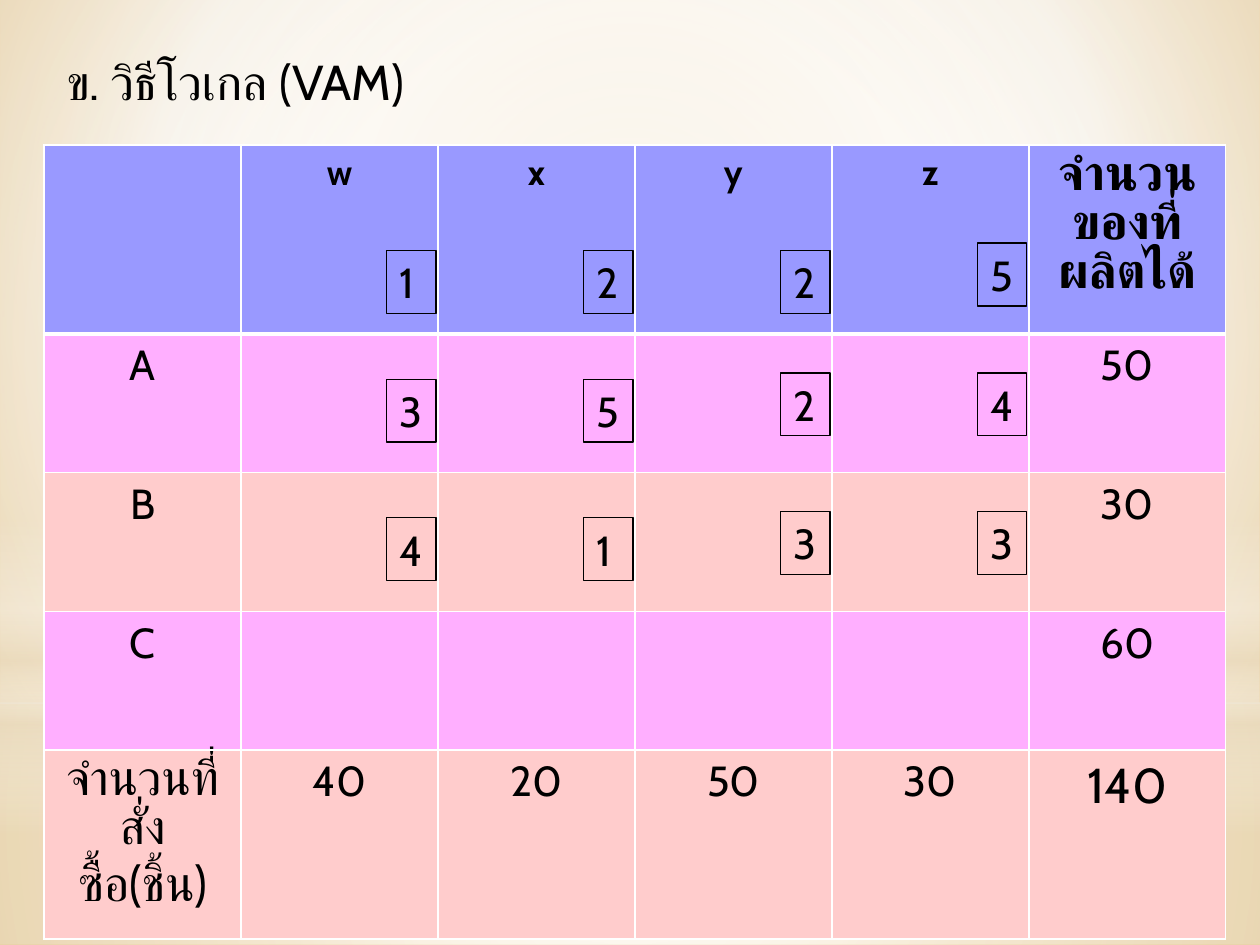
from lxml.etree import SubElement
from pptx import Presentation
from pptx.dml.color import RGBColor
from pptx.enum.shapes import MSO_SHAPE as Shape
from pptx.enum.text import MSO_ANCHOR as Anchor, MSO_AUTO_SIZE as AutoSize, PP_ALIGN as Align
from pptx.oxml import parse_xml
from pptx.oxml.ns import nsdecls, qn
from pptx.util import Inches, Pt

BLACK, WHITE, TAN = "000000", "FFFFFF", "EBDDC3"
HEADER, PINK, PEACH = "9999FF", "FFAFFF", "FFCCCC"
CENTER = (50, 50, 50, 50)

ROWS = [
    ["", "w", "x", "y", "z", "จำนวนของที่ผลิตได้"],
    ["A", "", "", "", "", "50"],
    ["B", "", "", "", "", "30"],
    ["C", "", "", "", "", "60"],
    ["จำนวนที่สั่งซื้อ(ชิ้น)", "40", "20", "50", "30", "140"],
]
ROW_HEIGHTS = [1.5, 1.1, 1.1, 1.1, 1.5]
ROW_FILLS = [HEADER, PINK, PEACH, PINK, PEACH]
TABLE_LEFT, TABLE_TOP, TABLE_WIDTH = 0.35, 1.15, 9.38
COLUMN_WIDTH = TABLE_WIDTH / len(ROWS[0])

# Unit costs of each destination column, and the tops of their boxes
COSTS = [("1", "3", "4"), ("2", "5", "1"), ("2", "2", "3"), ("5", "4", "3")]
COST_TOPS = [(1.99, 3.01, 4.11), (1.99, 3.01, 4.11), (1.99, 2.96, 4.06), (1.93, 2.96, 4.06)]
COST_LEFT = 3.07


def color(value):
    return RGBColor.from_string(value)


def make_gradient(solid_fill, stops, focus=None):
    """Replace a solid fill by (position, colour, opacity) stops: radial with a focus, else downward."""
    gradient = parse_xml(f'<a:gradFill {nsdecls("a")} rotWithShape="1"><a:gsLst/></a:gradFill>')
    for position, value, opacity in stops:
        stop = SubElement(gradient[0], qn("a:gs"), pos=str(position * 1000))
        stop_color = SubElement(stop, qn("a:srgbClr"), val=value)
        if opacity < 100:
            SubElement(stop_color, qn("a:alpha"), val=str(opacity * 1000))
    if focus:
        radial = SubElement(gradient, qn("a:path"), path="circle")
        SubElement(radial, qn("a:fillToRect"),
                   {side: str(part * 1000) for side, part in zip("ltrb", focus)})
    else:
        SubElement(gradient, qn("a:lin"), ang="5400000", scaled="0")
    solid_fill.getparent().replace(solid_fill, gradient)


class SlideBuilder:
    font = "Cabin"

    def __init__(self, slide):
        self.slide = slide

    def background(self, stops, focus):
        self.slide.background.fill.solid()
        make_gradient(self.slide.element.xpath(".//p:bgPr/a:solidFill")[0], stops, focus)

    def glow(self, kind, top, height, stops, focus=None):
        shape = self.slide.shapes.add_shape(kind, 0, Inches(top), Inches(10), Inches(height))
        shape.shadow.inherit = False
        shape.line.fill.background()
        shape.fill.solid()
        make_gradient(shape.element.spPr.find(qn("a:solidFill")), stops, focus)

    def add_text(self, frame, text, size, bold=False, align=Align.LEFT):
        paragraph = frame.paragraphs[0]
        paragraph.alignment = align
        run = paragraph.add_run()
        run.text = text
        run.font.name, run.font.size, run.font.bold = self.font, Pt(size), bold
        run.font.color.rgb = color(BLACK)

    def title(self, text, left, top, width, height):
        box = self.slide.shapes.add_textbox(Inches(left), Inches(top), Inches(width), Inches(height))
        box.text_frame.word_wrap = False
        box.text_frame.auto_size = AutoSize.SHAPE_TO_FIT_TEXT
        self.add_text(box.text_frame, text, 28)

    def cost_box(self, text, left, top):
        shape = self.slide.shapes.add_shape(
            Shape.RECTANGLE, Inches(left), Inches(top), Inches(0.39), Inches(0.5))
        shape.shadow.inherit = False
        shape.fill.background()
        shape.line.color.rgb = color(BLACK)
        shape.line.width = Pt(0.75)
        frame = shape.text_frame
        frame.word_wrap = True
        frame.auto_size = AutoSize.SHAPE_TO_FIT_TEXT
        frame.vertical_anchor = Anchor.TOP
        self.add_text(frame, text, 24)

    def borders(self, cell, top, bottom):
        properties = cell._tc.get_or_add_tcPr()
        for index, (side, width) in enumerate(zip("LRTB", (1, 1, top, bottom))):
            properties.insert(index, parse_xml(
                f'<a:ln{side} {nsdecls("a")} w="{Pt(width)}"><a:solidFill>'
                f'<a:srgbClr val="{WHITE}"/></a:solidFill></a:ln{side}>'))

    def table(self, rows, heights, fills):
        table = self.slide.shapes.add_table(
            len(rows), len(rows[0]), Inches(TABLE_LEFT), Inches(TABLE_TOP),
            Inches(TABLE_WIDTH), Inches(sum(heights))).table
        for column in table.columns:
            column.width = Inches(COLUMN_WIDTH)
        for r, texts in enumerate(rows):
            table.rows[r].height = Inches(heights[r])
            for c, text in enumerate(texts):
                cell = table.cell(r, c)
                cell.fill.solid()
                cell.fill.fore_color.rgb = color(fills[r])
                self.borders(cell, 3 if r == 1 else 1, 3 if r == 0 else 1)
                if text:
                    large = len(text) > 2
                    size = 28 if large else 20 if r == 0 else 24
                    self.add_text(cell.text_frame, text, size, r == 0, Align.CENTER)


def main():
    presentation = Presentation()
    presentation.slide_width, presentation.slide_height = Inches(10), Inches(7.5)
    builder = SlideBuilder(presentation.slides.add_slide(presentation.slide_layouts[6]))

    builder.background([(0, "ECD7B0", 100), (60, WHITE, 100), (100, "E6BE74", 100)], (20, 10, 20, 60))
    builder.glow(Shape.RECTANGLE, 5.58, 1.92, [(0, WHITE, 91), (37, WHITE, 76), (100, TAN, 79)], CENTER)
    builder.glow(Shape.RECTANGLE, 0, 5.58, [(0, WHITE, 89), (48, WHITE, 62), (100, TAN, 79)], CENTER)
    builder.glow(Shape.RECTANGLE, 4.12, 2.5, [(0, WHITE, 0), (29, WHITE, 30), (45, TAN, 40),
                                              (55, WHITE, 26), (65, TAN, 60), (100, WHITE, 0)])
    builder.glow(Shape.OVAL, 1.75, 5.58, [(0, WHITE, 100), (56, WHITE, 0)], CENTER)

    builder.title("ข. วิธีโวเกล (VAM)", 0.43, 0.36, 3.39, 0.57)
    builder.table(ROWS, ROW_HEIGHTS, ROW_FILLS)
    for index, (costs, tops) in enumerate(zip(COSTS, COST_TOPS)):
        for cost, top in zip(costs, tops):
            builder.cost_box(cost, COST_LEFT + index * COLUMN_WIDTH, top)

    presentation.save("out.pptx")


if __name__ == "__main__":
    main()
